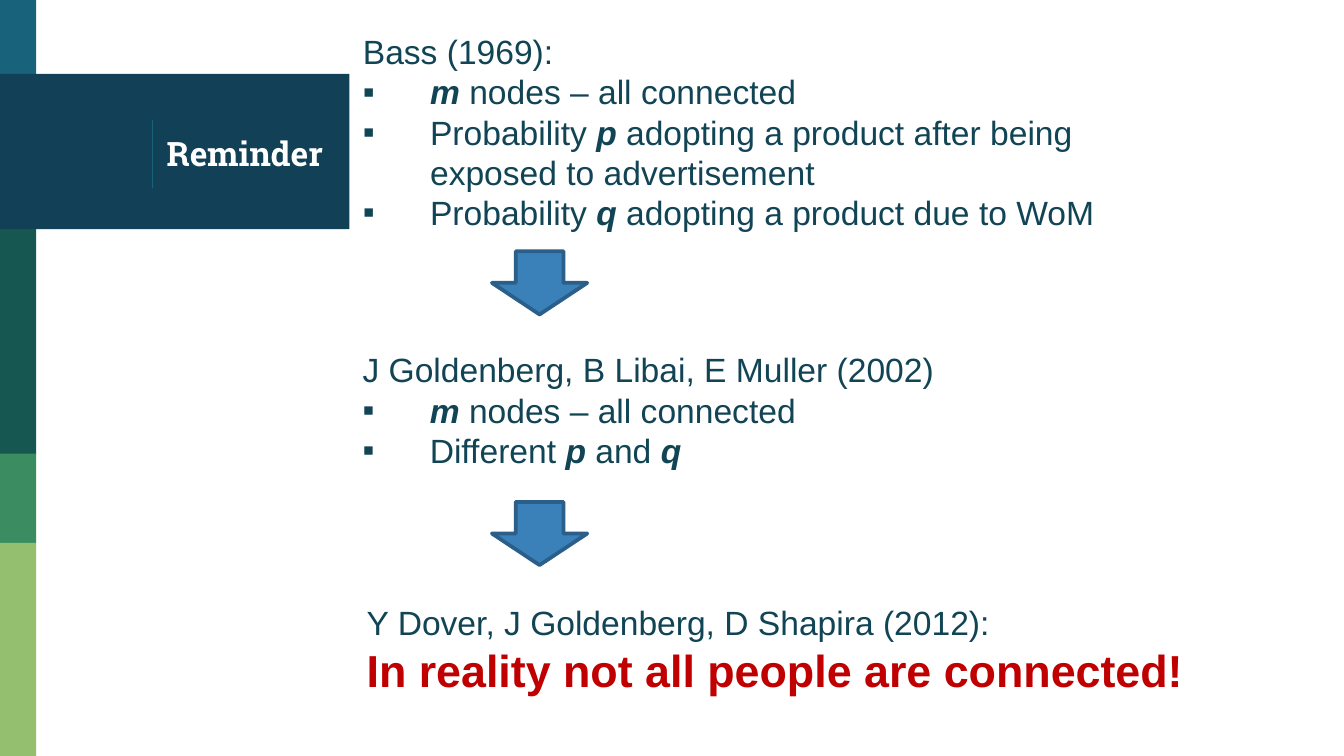
from lxml import etree
from pptx import Presentation
from pptx.dml.color import RGBColor
from pptx.enum.shapes import MSO_CONNECTOR, MSO_SHAPE
from pptx.enum.text import MSO_ANCHOR, MSO_AUTO_SIZE, PP_ALIGN
from pptx.oxml.ns import qn
from pptx.util import Emu, Pt

RECT, DOWN = MSO_SHAPE.RECTANGLE, MSO_SHAPE.DOWN_ARROW
LINE = MSO_CONNECTOR.STRAIGHT
LEFT = PP_ALIGN.LEFT
TOP, MIDDLE = MSO_ANCHOR.TOP, MSO_ANCHOR.MIDDLE
FIXED = MSO_AUTO_SIZE.NONE

WHITE = RGBColor(0xFF, 0xFF, 0xFF)
TEAL = RGBColor(0x18, 0x63, 0x7B)
NAVY = RGBColor(0x12, 0x40, 0x57)
PINE = RGBColor(0x16, 0x57, 0x51)
GREEN = RGBColor(0x3B, 0x8D, 0x61)
LIME = RGBColor(0x94, 0xBF, 0x6E)
INK = RGBColor(0x11, 0x44, 0x54)
RED = RGBColor(0xC0, 0x00, 0x00)
BLUE = RGBColor(0x3A, 0x81, 0xBA)
EDGE = RGBColor(0x2B, 0x5F, 0x8A)

SCALE = 4572


def px(*nums):
    return [Emu(n * SCALE) for n in nums]


def write(box, place, lines, anchor=TOP):
    box.left, box.top, box.width, box.height = px(*place)
    frame = box.text_frame
    frame.word_wrap = True
    frame.auto_size = FIXED
    frame.vertical_anchor = anchor
    inset = px(20)[0]
    frame.margin_left = frame.margin_right = inset
    frame.margin_top = frame.margin_bottom = inset
    for i, (text, face, size, color, bold, dot) in enumerate(lines):
        para = frame.add_paragraph() if i else frame.paragraphs[0]
        para.alignment = LEFT
        para.line_spacing = 1.0
        para.space_before = para.space_after = Pt(0)
        font = para.font
        font.name, font.size, font.bold = face, Pt(size), bold
        font.color.rgb = color
        for j, part in enumerate(text.split("*")):
            if part:
                run = para.add_run()
                run.text = part
                if j % 2:
                    run.font.bold = run.font.italic = True
        props = para._p.get_or_add_pPr()
        indent = px(100)[0] if dot else 0
        props.set("marL", str(indent))
        props.set("indent", str(-indent))
        base = props.find(qn("a:defRPr"))
        if dot:
            base.addprevious(etree.Element(qn("a:buFont"), typeface=face))
            base.addprevious(etree.Element(qn("a:buChar"), char="▪"))
        else:
            base.addprevious(etree.Element(qn("a:buNone")))


deck = Presentation()
deck.slide_width, deck.slide_height = px(2000, 1125)
slide = deck.slides.add_slide(deck.slide_layouts[1])
shapes = slide.shapes
title, body = shapes.title, slide.placeholders[1]

for top, width, height, color in [
    (0, 54, 116, TEAL),
    (110, 1000, 231, NAVY),
    (341, 54, 335, PINE),
    (675, 54, 133, GREEN),
    (808, 54, 317, LIME),
]:
    bar = shapes.add_shape(RECT, *px(0, top, width, height))
    bar.shadow.inherit = False
    bar.fill.solid()
    bar.fill.fore_color.rgb = color
    bar.line.fill.background()

rule = shapes.add_connector(LINE, *px(227, 178, 227, 280))
rule.line.color.rgb = TEAL
rule.line.width = Pt(0.75)
etree.SubElement(rule._element.spPr, qn("a:effectLst"))

for holder in (title, body):
    shapes._spTree.append(holder._element)

plain = ("Arial", 18, INK, False, False)
item = ("Arial", 18, INK, False, True)
write(title, (228, 116, 724, 224),
      [("Reminder", "Roboto Slab", 18, WHITE, True, False)], MIDDLE)
body.fill.solid()
body.fill.fore_color.rgb = WHITE
write(body, (520, 26, 1158, 488), [
    ("Bass (1969):", *plain),
    ("*m* nodes – all connected", *item),
    ("Probability *p* adopting a product after being exposed to advertisement", *item),
    ("Probability *q* adopting a product due to WoM", *item),
])
write(shapes.add_textbox(*px(0, 0, 1, 1)), (520, 500, 1094, 314), [
    ("J Goldenberg, B Libai, E Muller (2002)", *plain),
    ("*m* nodes – all connected", *item),
    ("Different *p *and *q*", *item),
])
write(shapes.add_textbox(*px(0, 0, 1, 1)), (526, 876, 1326, 314), [
    ("Y Dover, J Goldenberg, D Shapira (2012):", *plain),
    ("In reality not all people are connected!", "Arial", 24, RED, True, False),
])

for top in (374, 747):
    arrow = shapes.add_shape(DOWN, *px(732, top, 142, 94))
    arrow.shadow.inherit = False
    arrow.fill.solid()
    arrow.fill.fore_color.rgb = BLUE
    arrow.line.color.rgb = EDGE
    arrow.line.width = Pt(2)

deck.save("out.pptx")
